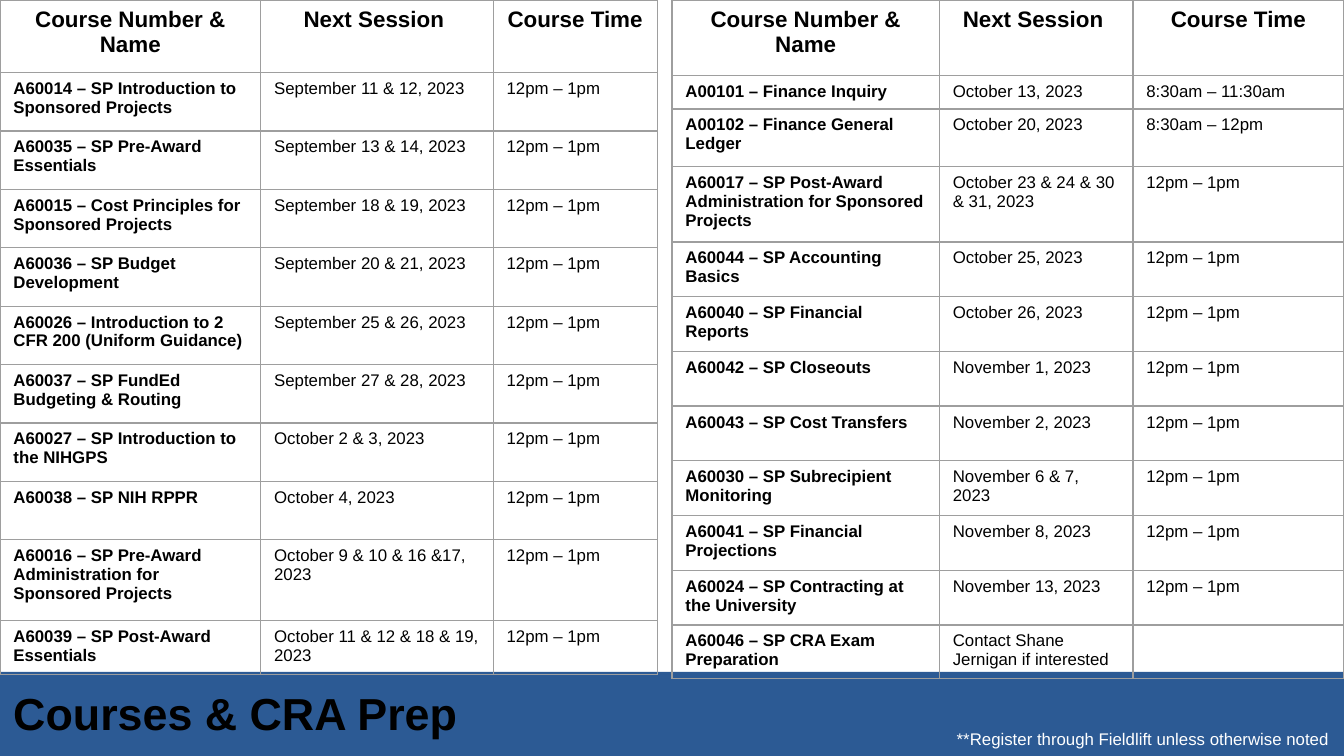
import lxml.etree
import pptx
import pptx.dml.color
import pptx.enum.shapes
import pptx.enum.text
import pptx.oxml.ns
import pptx.util
from pptx.util import Inches

BLACK = pptx.dml.color.RGBColor(0x00, 0x00, 0x00)
WHITE = pptx.dml.color.RGBColor(0xFF, 0xFF, 0xFF)
BAND_BLUE = pptx.dml.color.RGBColor(0x2C, 0x5A, 0x94)
BORDER_GREY = pptx.dml.color.RGBColor(0x9E, 0x9E, 0x9E)

HEADINGS = ("Course Number & Name", "Next Session ", "Course Time")
NOON = "12pm – 1pm"

SEPTEMBER_COURSES = [
    ("A60014 – SP Introduction to Sponsored Projects", "September 11 & 12, 2023", NOON),
    ("A60035 – SP Pre-Award Essentials", "September 13 & 14, 2023", NOON),
    ("A60015 – Cost Principles for Sponsored Projects", "September 18 & 19, 2023", NOON),
    ("A60036 – SP Budget Development", "September 20 & 21, 2023", NOON),
    ("A60026 – Introduction to 2 CFR 200 (Uniform Guidance)", "September 25 & 26, 2023", NOON),
    ("A60037 – SP FundEd Budgeting & Routing", "September 27 & 28, 2023", NOON),
    ("A60027 – SP Introduction to the NIHGPS", "October 2 & 3, 2023", NOON),
    ("A60038 – SP NIH RPPR", "October 4, 2023", NOON),
    ("A60016 – SP Pre-Award Administration for Sponsored Projects",
     "October 9 & 10 & 16 &17, 2023", NOON),
    ("A60039 – SP Post-Award Essentials", "October 11 & 12 & 18 & 19, 2023", NOON),
]

OCTOBER_COURSES = [
    ("A00101 – Finance Inquiry", "October 13, 2023", "8:30am – 11:30am"),
    ("A00102 – Finance General Ledger", "October 20, 2023", "8:30am – 12pm"),
    ("A60017 – SP Post-Award Administration for Sponsored Projects",
     "October 23 & 24 & 30 & 31, 2023", NOON),
    ("A60044 – SP Accounting Basics", "October 25, 2023", NOON),
    ("A60040 – SP Financial Reports", "October 26, 2023", NOON),
    ("A60042 – SP Closeouts", "November 1, 2023", NOON),
    ("A60043 – SP Cost Transfers", "November 2, 2023", NOON),
    ("A60030 – SP Subrecipient Monitoring", "November 6 & 7, 2023", NOON),
    ("A60041 – SP Financial Projections", "November 8, 2023", NOON),
    ("A60024 – SP Contracting at the University", "November 13, 2023", NOON),
    ("A60046 – SP CRA Exam Preparation", "Contact Shane Jernigan if interested", ""),
]


def set_font(paragraph, size, color, bold=False):
    font = paragraph.font
    font.name = "Arial"
    font.size = pptx.util.Pt(size)
    font.bold = bold
    font.color.rgb = color


def add_band(slide):
    band = slide.shapes.add_shape(
        pptx.enum.shapes.MSO_SHAPE.RECTANGLE, Inches(0), Inches(5), Inches(10), Inches(0.63))
    band.shadow.inherit = False
    band.fill.solid()
    band.fill.fore_color.rgb = BAND_BLUE
    band.line.fill.background()


def add_text(slide, text, left, top, width, height, size, color, bold=False):
    box = slide.shapes.add_textbox(Inches(left), Inches(top), Inches(width), Inches(height))
    box.text_frame.word_wrap = True
    paragraph = box.text_frame.paragraphs[0]
    paragraph.text = text
    set_font(paragraph, size, color, bold)


def set_borders(cell):
    properties = cell._tc.get_or_add_tcPr()
    for position, side in enumerate(("lnL", "lnR", "lnT", "lnB")):
        line = lxml.etree.Element(
            pptx.oxml.ns.qn("a:" + side), w=str(pptx.util.Pt(0.75)))
        fill = lxml.etree.SubElement(line, pptx.oxml.ns.qn("a:solidFill"))
        lxml.etree.SubElement(fill, pptx.oxml.ns.qn("a:srgbClr"), val=str(BORDER_GREY))
        properties.insert(position, line)


def fill_cell(cell, text, is_heading, is_name):
    cell.fill.background()
    set_borders(cell)
    paragraph = cell.text_frame.paragraphs[0]
    paragraph.text = text
    set_font(paragraph, 12 if is_heading else 9, BLACK, is_heading or is_name)
    if is_heading:
        paragraph.alignment = pptx.enum.text.PP_ALIGN.CENTER


def spread_rows(total, first_rows, equal_count, last_rows):
    equal_height = (total - sum(first_rows) - sum(last_rows)) / equal_count
    return first_rows + [equal_height] * equal_count + last_rows


def add_course_table(slide, left, column_widths, row_heights, courses):
    rows = [HEADINGS] + courses
    table = slide.shapes.add_table(
        len(rows), len(HEADINGS), Inches(left), Inches(0),
        Inches(sum(column_widths)), Inches(sum(row_heights))).table
    table.first_row = False
    table.horz_banding = False
    for column, width in zip(table.columns, column_widths):
        column.width = Inches(width)
    for row, height in zip(table.rows, row_heights):
        row.height = Inches(height)
    for row_index, texts in enumerate(rows):
        for column_index, text in enumerate(texts):
            fill_cell(table.cell(row_index, column_index), text,
                      row_index == 0, column_index == 0)


def main():
    presentation = pptx.Presentation()
    presentation.slide_width = Inches(10)
    presentation.slide_height = presentation.slide_width * 9 // 16
    slide = presentation.slides.add_slide(presentation.slide_layouts[6])

    add_band(slide)
    add_text(slide, "Courses & CRA Prep", 0, 5.05, 5.21, 0.91, 24, BLACK, bold=True)
    add_course_table(slide, 0, [1.94, 1.73, 1.22],
                     spread_rows(5.01, [0.54], 8, [0.6, 0.39]), SEPTEMBER_COURSES)
    add_course_table(slide, 5, [1.99, 1.44, 1.57],
                     spread_rows(5.05, [0.56, 0.25, 0.43, 0.56], 7, [0.4]), OCTOBER_COURSES)
    add_text(slide, "**Register through Fieldlift unless otherwise noted",
             7.02, 5.37, 3.38, 0.25, 9, WHITE)

    presentation.save("out.pptx")


if __name__ == "__main__":
    main()
